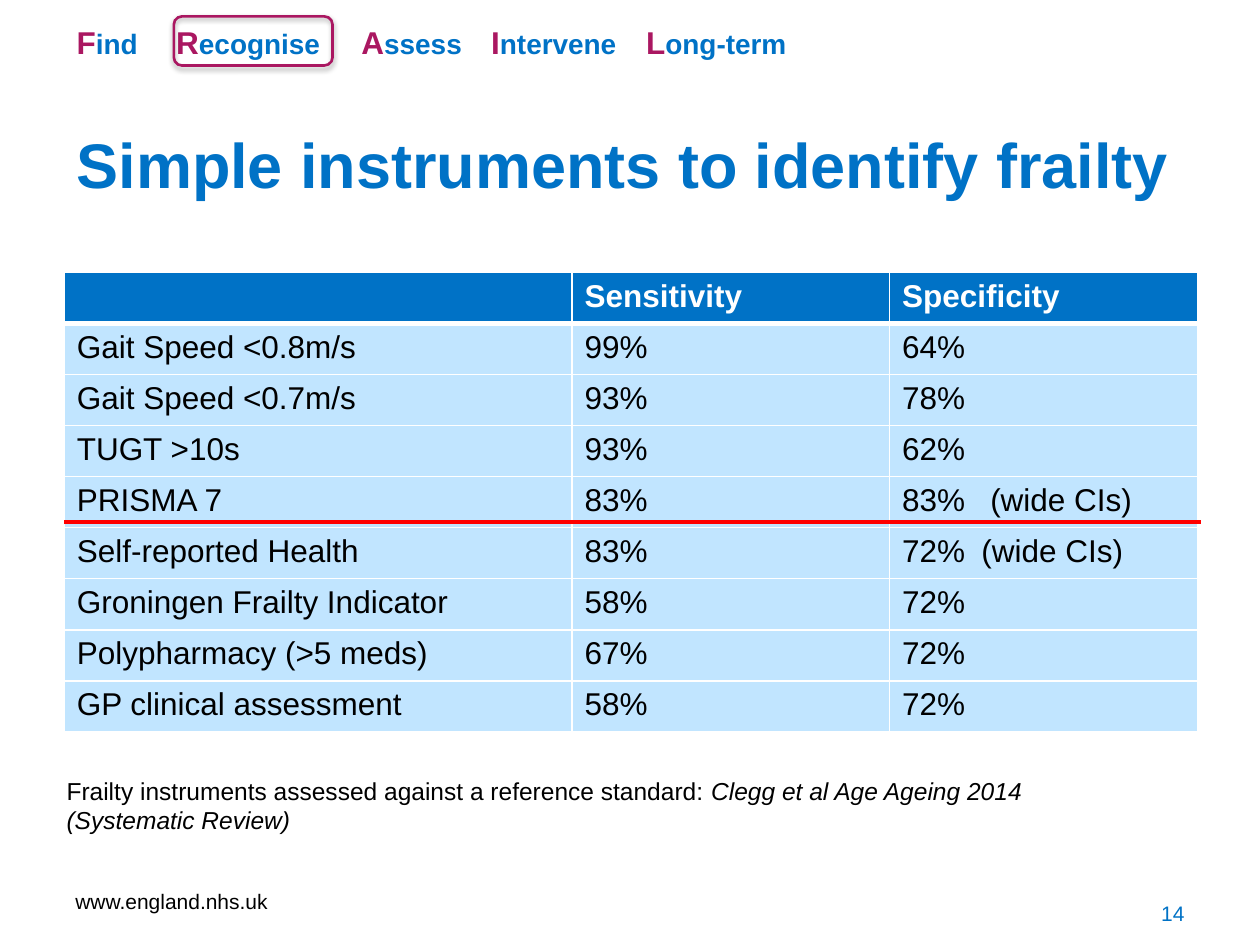
from dataclasses import dataclass

from lxml.etree import SubElement
from pptx import Presentation
from pptx.dml.color import RGBColor
from pptx.enum.shapes import MSO_CONNECTOR, MSO_SHAPE
from pptx.enum.text import MSO_ANCHOR, PP_ALIGN
from pptx.oxml.ns import qn
from pptx.util import Inches, Pt

COLOURS = {
    "blue": "0072C6",
    "plum": "AA1761",
    "pale": "C1E5FF",
    "red": "FF0000",
    "black": "000000",
    "white": "FFFFFF",
}
FONT = "Arial"


@dataclass(frozen=True)
class Run:
    text: str
    size: float = 18
    colour: str = "black"
    bold: bool = False
    italic: bool = False


@dataclass(frozen=True)
class Instrument:
    name: str
    sensitivity: str
    specificity: str
    note_tab: float = 0


STEPS = ["Find", "Recognise", "Assess", "Intervene", "Long-term"]
STEP_TABS = [0.79, 2.26, 3.29, 4.52]
COLUMN_WIDTHS = [4.03, 2.52, 2.45]
HEADINGS = ["", "Sensitivity", "Specificity"]
INSTRUMENTS = [
    Instrument("Gait Speed <0.8m/s", "99%", "64%"),
    Instrument("Gait Speed <0.7m/s", "93%", "78%"),
    Instrument("TUGT >10s", "93%", "62%"),
    Instrument("PRISMA 7", "83%", "83%\t(wide CIs)", 0.7),
    Instrument("Self-reported Health", "83%", "72%\t(wide CIs)", 0.63),
    Instrument("Groningen Frailty Indicator", "58%", "72%"),
    Instrument("Polypharmacy (>5 meds)", "67%", "72%"),
    Instrument("GP clinical assessment", "58%", "72%"),
]


def rgb(name: str) -> RGBColor:
    return RGBColor.from_string(COLOURS[name])


def write(frame, *lines: list[Run], align=PP_ALIGN.LEFT, tabs=()) -> None:
    for index, runs in enumerate(lines):
        paragraph = frame.paragraphs[0] if index == 0 else frame.add_paragraph()
        paragraph.alignment = align
        if tabs:
            tab_list = SubElement(paragraph._p.get_or_add_pPr(), qn("a:tabLst"))
            for position in tabs:
                SubElement(tab_list, qn("a:tab"), pos=str(Inches(position)), algn="l")
        for item in runs:
            run = paragraph.add_run()
            run.text = item.text
            run.font.name = FONT
            run.font.size = Pt(item.size)
            run.font.bold = item.bold
            run.font.italic = item.italic
            run.font.color.rgb = rgb(item.colour)


def add_text(slide, left: float, top: float, width: float, height: float,
             *lines: list[Run], anchor=MSO_ANCHOR.MIDDLE, **text_format) -> None:
    frame = slide.shapes.add_textbox(
        Inches(left), Inches(top), Inches(width), Inches(height)).text_frame
    frame.word_wrap = True
    frame.vertical_anchor = anchor
    write(frame, *lines, **text_format)


def style_cell(cell, fill: str, top: float, bottom: float) -> None:
    properties = cell._tc.get_or_add_tcPr()
    for side, width in (("L", 1), ("R", 1), ("T", top), ("B", bottom)):
        border = SubElement(properties, qn(f"a:ln{side}"), w=str(Pt(width)))
        solid = SubElement(border, qn("a:solidFill"))
        SubElement(solid, qn("a:srgbClr"), val=COLOURS["white"])
    cell.fill.solid()
    cell.fill.fore_color.rgb = rgb(fill)


def add_instrument_table(slide) -> None:
    table = slide.shapes.add_table(
        len(INSTRUMENTS) + 1, len(HEADINGS),
        Inches(0.51), Inches(2.16), Inches(9), Inches(3.65)).table
    table.horz_banding = False
    for column, width in zip(table.columns, COLUMN_WIDTHS):
        column.width = Inches(width)
    for column, heading in enumerate(HEADINGS):
        cell = table.cell(0, column)
        style_cell(cell, "blue", 1, 3)
        write(cell.text_frame, [Run(heading, colour="white", bold=True)])
    for row, instrument in enumerate(INSTRUMENTS, 1):
        values = [instrument.name, instrument.sensitivity, instrument.specificity]
        for column, value in enumerate(values):
            cell = table.cell(row, column)
            style_cell(cell, "pale", 3 if row == 1 else 1, 1)
            tabs = [instrument.note_tab] if "\t" in value else []
            write(cell.text_frame, [Run(value)], tabs=tabs)


def add_cutoff_line(slide) -> None:
    cutoff = slide.shapes.add_connector(
        MSO_CONNECTOR.STRAIGHT, Inches(0.51), Inches(4.14), Inches(9.53), Inches(4.14))
    cutoff.line.color.rgb = rgb("red")
    cutoff.line.width = Pt(2.25)
    SubElement(cutoff._element.spPr, qn("a:effectLst"))


def add_step_highlight(slide) -> None:
    highlight = slide.shapes.add_shape(
        MSO_SHAPE.ROUNDED_RECTANGLE, Inches(1.38), Inches(0.13), Inches(1.26), Inches(0.39))
    highlight.fill.background()
    highlight.line.color.rgb = rgb("plum")
    highlight.line.width = Pt(1.5)
    highlight.shadow.inherit = False
    effects = highlight._element.spPr.find(qn("a:effectLst"))
    shadow = SubElement(effects, qn("a:outerShdw"), blurRad=str(Pt(3.1)),
                        dist=str(Pt(1.8)), dir="5400000", rotWithShape="0")
    shade = SubElement(shadow, qn("a:srgbClr"), val=COLOURS["black"])
    SubElement(shade, qn("a:alpha"), val="35000")


def main() -> None:
    presentation = Presentation()
    presentation.slide_width = Inches(10)
    presentation.slide_height = Inches(7.5)
    slide = presentation.slides.add_slide(presentation.slide_layouts[6])

    step_runs = []
    for index, step in enumerate(STEPS):
        gap = "\t" if index < len(STEPS) - 1 else ""
        step_runs += [Run(step[0], 18, "plum", bold=True),
                      Run(step[1:] + gap, 16, "blue", bold=True)]

    add_text(slide, 0.5, 6.95, 2.33, 0.4, [Run("www.england.nhs.uk", 12)])
    add_text(slide, 0.51, 0.13, 5.91, 0.4, step_runs,
             anchor=MSO_ANCHOR.TOP, tabs=STEP_TABS)
    add_text(slide, 0.51, 0.82, 8.9, 0.96,
             [Run("Simple instruments to identify frailty", 36, "blue", bold=True)])
    add_instrument_table(slide)
    add_cutoff_line(slide)
    add_text(slide, 0.43, 6.11, 8.39, 0.57,
             [Run("Frailty instruments assessed against a reference standard:", 14),
              Run(" Clegg et al Age Ageing 2014", 14, italic=True)],
             [Run("(Systematic Review)", 14, italic=True)],
             anchor=MSO_ANCHOR.TOP)
    add_step_highlight(slide)
    add_text(slide, 7.17, 7.05, 2.33, 0.4, [Run("14", 12, "blue")], align=PP_ALIGN.RIGHT)

    presentation.save("out.pptx")


if __name__ == "__main__":
    main()
